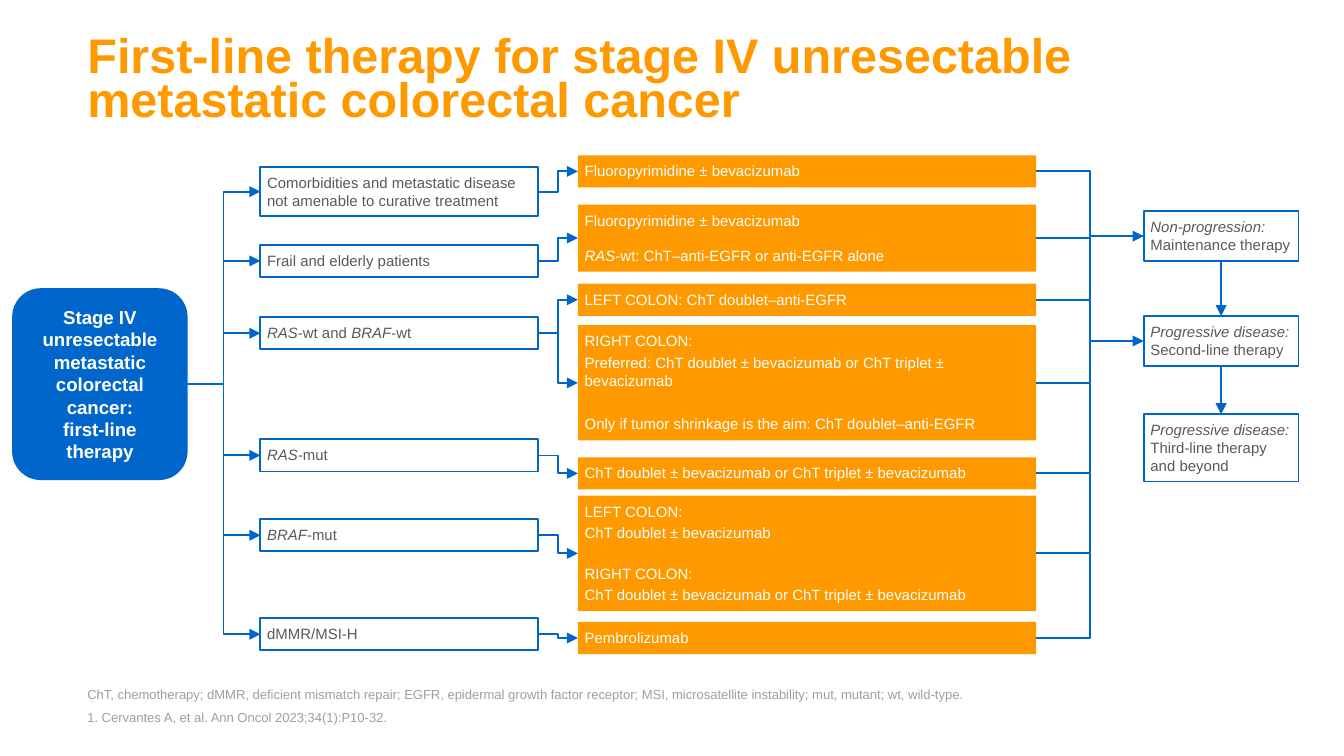
from collections import namedtuple
from dataclasses import dataclass

from lxml.etree import SubElement
from pptx import Presentation
from pptx.dml.color import RGBColor
from pptx.enum.shapes import MSO_CONNECTOR, MSO_SHAPE
from pptx.enum.text import MSO_ANCHOR, MSO_AUTO_SIZE, PP_ALIGN
from pptx.oxml.ns import qn
from pptx.util import Pt

Box = namedtuple("Box", "left top width height")
Line = namedtuple("Line", "text before", defaults=[0])
TOP, LEFT, BOTTOM, RIGHT = range(4)


@dataclass(frozen=True)
class Theme:
    font: str = "Arial"
    orange: RGBColor = RGBColor(0xFF, 0x99, 0x00)
    blue: RGBColor = RGBColor(0x00, 0x66, 0xCC)
    white: RGBColor = RGBColor(0xFF, 0xFF, 0xFF)
    dark: RGBColor = RGBColor(0x58, 0x59, 0x5B)
    grey: RGBColor = RGBColor(0x9E, 0x9F, 0xA2)
    title_size: float = 26
    root_size: float = 10
    body_size: float = 8
    note_size: float = 7
    line_width: float = 1


THEME = Theme()

PROFILES = [
    (0, 26.6, "Comorbidities and metastatic disease not amenable to curative treatment"),
    (41.8, 17.2, "Frail and elderly patients"),
    (80.6, 17.2, "*RAS*-wt and *BRAF-*wt"),
    (146, 17.2, "*RAS-*mut"),
    (188.8, 17.2, "*BRAF*-mut"),
    (241.8, 17.2, "dMMR/MSI-H"),
]
TREATMENTS = [
    (0, 17.2, [Line("Fluoropyrimidine ± bevacizumab")]),
    (26.4, 36, [Line("Fluoropyrimidine ± bevacizumab"),
                Line("*RAS*-wt: ChT–anti-EGFR or anti-EGFR alone", 7.5)]),
    (68.8, 17.2, [Line("LEFT COLON: ChT doublet–anti-EGFR")]),
    (91, 61.8, [Line("RIGHT COLON:"),
                Line("Preferred: ChT doublet ± bevacizumab or ChT triplet ± bevacizumab"),
                Line("Only if tumor shrinkage is the aim: ChT doublet–anti-EGFR", 11.5)]),
    (161.8, 17.2, [Line("ChT doublet ± bevacizumab or ChT triplet ± bevacizumab")]),
    (182.4, 61.8, [Line("LEFT COLON:"),
                   Line("ChT doublet ± bevacizumab"),
                   Line("RIGHT COLON:", 10),
                   Line("ChT doublet ± bevacizumab or ChT triplet ± bevacizumab")]),
    (250, 17.2, [Line("Pembrolizumab")]),
]
OUTCOMES = [
    (0, 26.6, ["*Non-progression:*", "Maintenance therapy"]),
    (56.2, 26.6, ["*Progressive disease:*", "Second-line therapy"]),
    (108.8, 36, ["*Progressive disease:*", "Third-line therapy and beyond"]),
]
PROFILE_TREATMENTS = [(0, 0), (1, 1), (2, 2), (2, 3), (3, 4), (4, 5), (5, 6)]


def apply(target, values):
    for name, value in values.items():
        setattr(target, name, value)


def place(shape, box):
    apply(shape, {name: Pt(value) for name, value in box._asdict().items()})


def write(shape, lines, size, color, bold=False, inset=0, anchor=MSO_ANCHOR.TOP,
          **paragraph_format):
    frame = shape.text_frame
    apply(frame, {"word_wrap": True, "auto_size": MSO_AUTO_SIZE.NONE,
                  "vertical_anchor": anchor})
    apply(frame, {f"margin_{side}": Pt(inset)
                  for side in ("left", "top", "right", "bottom")})
    for index, line in enumerate(lines):
        paragraph = frame.add_paragraph() if index else frame.paragraphs[0]
        line = line if isinstance(line, Line) else Line(line)
        apply(paragraph, {"alignment": PP_ALIGN.LEFT, "space_before": Pt(line.before),
                          **paragraph_format})
        for position, text in enumerate(line.text.split("*")):
            if text:
                run = paragraph.add_run()
                run.text = text
                apply(run.font, {"name": THEME.font, "size": Pt(size), "bold": bold,
                                 "italic": position % 2 == 1})
                run.font.color.rgb = color


def add_box(slide, box, fill=None, line=None, kind=MSO_SHAPE.RECTANGLE):
    shape = slide.shapes.add_shape(kind, *map(Pt, box))
    shape.shadow.inherit = False
    if fill is None:
        shape.fill.background()
    else:
        shape.fill.solid()
        shape.fill.fore_color.rgb = fill
    if line is None:
        shape.line.fill.background()
    else:
        shape.line.color.rgb = line
        shape.line.width = Pt(THEME.line_width)
    return shape


def add_link(slide, start, end, kind=MSO_CONNECTOR.ELBOW, arrow=True, point=(0, 0)):
    connector = slide.shapes.add_connector(kind, *map(Pt, point * 2))
    if start:
        connector.begin_connect(*start)
    connector.end_connect(*end)
    connector.line.color.rgb = THEME.blue
    connector.line.width = Pt(THEME.line_width)
    if arrow:
        SubElement(connector.line._get_or_add_ln(), qn("a:tailEnd"), type="triangle")
    SubElement(connector._element.spPr, qn("a:effectLst"))


def add_title(slide, box):
    title = slide.shapes.title
    place(title, box)
    write(title, ["First-line therapy for stage IV unresectable metastatic colorectal cancer"],
          THEME.title_size, THEME.orange, bold=True, anchor=MSO_ANCHOR.BOTTOM,
          line_spacing=0.75)


def add_root(slide, box):
    root = add_box(slide, box, THEME.blue, THEME.blue, MSO_SHAPE.ROUNDED_RECTANGLE)
    root.adjustments[0] = 0.16
    write(root, ["Stage IV unresectable metastatic colorectal cancer:", "first-line therapy"],
          THEME.root_size, THEME.white, bold=True, inset=4.3,
          anchor=MSO_ANCHOR.MIDDLE, alignment=PP_ALIGN.CENTER)
    return root


def add_column(slide, box, items, color, fill=None, line=None, after=0):
    shapes = []
    for offset, height, text in items:
        shape = add_box(slide, Box(box.left, box.top + offset, box.width, height), fill, line)
        write(shape, [text] if isinstance(text, str) else text, THEME.body_size, color,
              inset=3.6, space_after=Pt(after))
        shapes.append(shape)
    return shapes


def add_flow(slide, box):
    root = add_root(slide, Box(box.left, box.top + 71.7, 93, 101.8))
    profiles = add_column(slide, Box(box.left + 132.5, box.top + 6.2, 149, 259),
                          PROFILES, THEME.dark, line=THEME.blue)
    treatments = add_column(slide, Box(box.left + 302.6, box.top, 245.5, 267.2),
                            TREATMENTS, THEME.white, fill=THEME.orange, after=2)
    outcomes = add_column(slide, Box(box.left + 605.7, box.top + 30, 83, 144.8),
                          OUTCOMES, THEME.dark, line=THEME.blue)
    for profile in profiles:
        add_link(slide, (root, RIGHT), (profile, LEFT))
    for profile, treatment in PROFILE_TREATMENTS:
        add_link(slide, (profiles[profile], RIGHT), (treatments[treatment], LEFT))
    for treatment in treatments:
        add_link(slide, (treatment, RIGHT), (outcomes[0], LEFT),
                 arrow=treatment is treatments[-1])
    add_link(slide, None, (outcomes[1], LEFT), MSO_CONNECTOR.STRAIGHT,
             point=(box.left + 576.9, box.top + 99.5))
    for upper, lower in zip(outcomes, outcomes[1:]):
        add_link(slide, (upper, BOTTOM), (lower, TOP), MSO_CONNECTOR.STRAIGHT)


def add_notes(slide, box):
    abbreviations = slide.shapes.add_textbox(*map(Pt, box._replace(height=24)))
    write(abbreviations,
          ["ChT, chemotherapy; dMMR, deficient mismatch repair; EGFR, epidermal growth factor "
           "receptor; MSI, microsatellite instability; mut, mutant; wt, wild-type."],
          THEME.note_size, THEME.grey, anchor=MSO_ANCHOR.BOTTOM, space_after=Pt(3))
    reference = slide.shapes.add_textbox(*map(Pt, box._replace(top=box.top + 28, height=12)))
    write(reference, ["1. Cervantes A, et al. Ann Oncol 2023;34(1):P10-32."],
          THEME.note_size, THEME.grey)


def main():
    presentation = Presentation()
    apply(presentation, {"slide_width": Pt(720), "slide_height": Pt(405)})
    slide = presentation.slides.add_slide(presentation.slide_layouts.get_by_name("Title Only"))
    add_title(slide, Box(46.8, 21.6, 628, 46))
    add_flow(slide, Box(7, 83.2, 689, 267.2))
    add_notes(slide, Box(46.8, 352.1, 628, 40))
    presentation.save("out.pptx")


if __name__ == "__main__":
    main()
